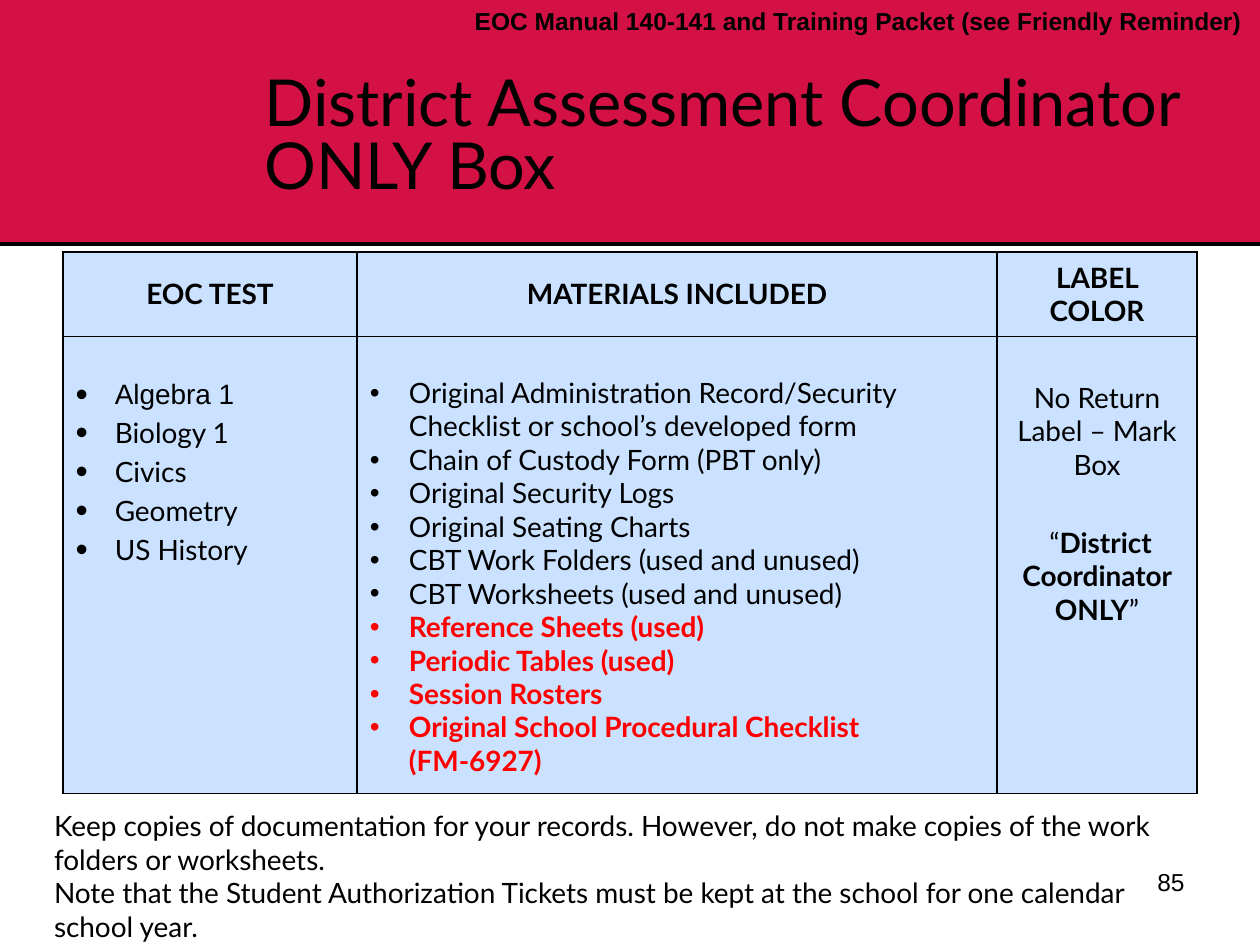
from dataclasses import dataclass
from itertools import product
from typing import Optional

from lxml.etree import SubElement
from pptx import Presentation
from pptx.dml.color import RGBColor
from pptx.enum.shapes import MSO_CONNECTOR as Connector, MSO_SHAPE as Shape
from pptx.enum.text import MSO_ANCHOR as Anchor, MSO_AUTO_SIZE as AutoSize, PP_ALIGN as Align
from pptx.oxml import parse_xml
from pptx.oxml.ns import nsdecls, qn
from pptx.util import Cm, Pt

COLORS = {"band": "D31145", "cell": "CAE2FF", "text": "000000", "accent": "FF0000"}


@dataclass
class Note:
    left: float
    top: float
    width: float
    height: float
    lines: list[str]
    size: int = 16
    font: str = "Lato"
    bold: bool = False
    align: Align = Align.LEFT


@dataclass
class Item:
    text: str
    font: str = "Lato"
    color: str = "text"
    bold: bool = False


NOTES = [
    Note(18.21, 17.35, 5.92, 1.32, ["85"], size=14, font="Arial", align=Align.RIGHT),
    Note(0.84, 16.18, 22.86, 3.68, [
        "Keep copies of documentation for your records. However, do not make copies "
        "of the work folders or worksheets.",
        "Note that the Student Authorization Tickets must be kept at the school for "
        "one calendar school year.",
    ]),
    Note(9.32, 0, 16.08, 0.86,
         ["EOC Manual 140-141 and Training Packet (see Friendly Reminder)"],
         size=14, font="Arial", bold=True),
]

HEADINGS = ["EOC TEST", "MATERIALS INCLUDED", "LABEL COLOR"]
COLUMN_WIDTHS = [5.93, 12.9, 4.03]
ROW_HEIGHTS = [1.7, 9.22]
TESTS = [Item("Algebra 1", font="Arial")] + [
    Item(name) for name in ("Biology 1", "Civics", "Geometry", "US History")]
MATERIALS = [Item(name) for name in (
    "Original Administration Record/Security Checklist or school’s developed form",
    "Chain of Custody Form (PBT only)",
    "Original Security Logs",
    "Original Seating Charts",
    "CBT Work Folders (used and unused)",
    "CBT Worksheets (used and unused)",
)] + [Item(name, color="accent", bold=True) for name in (
    "Reference Sheets (used)",
    "Periodic Tables (used)",
    "Session Rosters",
    "Original School Procedural Checklist (FM-6927)",
)]


def rgb(name: str) -> RGBColor:
    return RGBColor.from_string(COLORS[name])


def write(para, text: str, *, size: int = 16, font: str = "Lato", color: str = "text",
          bold: bool = False, align: Optional[Align] = None) -> None:
    """Add a formatted run to a paragraph."""
    span = para.add_run()
    span.text = text
    span.font.size = Pt(size)
    span.font.name = font
    span.font.bold = bold
    span.font.color.rgb = rgb(color)
    if align is not None:
        para.alignment = align


def next_para(frame, index: int):
    return frame.add_paragraph() if index else frame.paragraphs[0]


def add_note(page, note: Note) -> None:
    box = page.shapes.add_textbox(*map(Cm, (note.left, note.top, note.width, note.height)))
    box.text_frame.word_wrap = True
    for index, line in enumerate(note.lines):
        write(next_para(box.text_frame, index), line, size=note.size, font=note.font,
              bold=note.bold, align=note.align)


def style_cell(cell) -> None:
    """Give a cell thin black borders and the pale fill."""
    props = cell._tc.get_or_add_tcPr()
    for side in ("lnL", "lnR", "lnT", "lnB"):
        props.append(parse_xml(
            f'<a:{side} {nsdecls("a")} w="12700"><a:solidFill>'
            f'<a:srgbClr val="{COLORS["text"]}"/></a:solidFill></a:{side}>'))
    cell.fill.solid()
    cell.fill.fore_color.rgb = rgb("cell")


def fill_list(cell, items: list[Item], *, top: float, gap: float = 0,
              bullet_size: int = 100) -> None:
    """Write a bulleted list that starts at the given inset."""
    cell.margin_top = Cm(top)
    for index, item in enumerate(items):
        para = next_para(cell.text_frame, index)
        props = para._p.get_or_add_pPr()
        props.set("marL", str(Cm(0.79)))
        props.set("indent", str(-Cm(0.79)))
        SubElement(props, qn("a:buSzPct")).set("val", str(bullet_size * 1000))
        SubElement(props, qn("a:buFont")).set("typeface", "Arial")
        SubElement(props, qn("a:buChar")).set("char", "•")
        if index:
            para.space_before = Pt(gap)
        write(para, item.text, font=item.font, color=item.color, bold=item.bold)


def add_band(page) -> None:
    """Draw the title band and its rule behind the title."""
    rule = page.shapes.add_connector(Connector.STRAIGHT, 0, Cm(4.88), Cm(25.4), Cm(4.88))
    rule.line.color.rgb = rgb("text")
    rule.line.width = Pt(4)
    SubElement(rule.element.spPr, qn("a:effectLst"))
    band = page.shapes.add_shape(Shape.RECTANGLE, 0, 0, Cm(25.4), Cm(4.88))
    band.shadow.inherit = False
    band.fill.solid()
    band.fill.fore_color.rgb = rgb("band")
    band.line.fill.background()
    for part in (rule, band):
        page.shapes.title.element.addprevious(part.element)


def set_title(title) -> None:
    title.left, title.top, title.width, title.height = map(Cm, (5.08, 0.84, 20.32, 3.94))
    frame = title.text_frame
    frame.word_wrap = True
    frame.auto_size = AutoSize.NONE
    frame.vertical_anchor = Anchor.MIDDLE
    para = frame.paragraphs[0]
    para.line_spacing = 0.8
    write(para, "District Assessment Coordinator ", size=37, align=Align.LEFT)
    para.add_line_break()
    write(para, "ONLY Box", size=37)


def add_materials_table(page) -> None:
    frame = page.shapes.add_table(2, 3, Cm(1.27), Cm(5.08),
                                  Cm(sum(COLUMN_WIDTHS)), Cm(sum(ROW_HEIGHTS)))
    table = frame.table
    table.first_row = table.horz_banding = False
    for column, width in zip(table.columns, COLUMN_WIDTHS):
        column.width = Cm(width)
    for row, height in zip(table.rows, ROW_HEIGHTS):
        row.height = Cm(height)
    for row, column in product(range(2), range(3)):
        style_cell(table.cell(row, column))

    # Headings
    for column, heading in enumerate(HEADINGS):
        cell = table.cell(0, column)
        cell.vertical_anchor = Anchor.MIDDLE
        write(cell.text_frame.paragraphs[0], heading, bold=True, align=Align.CENTER)

    # Lists of tests and materials
    fill_list(table.cell(1, 0), TESTS, top=0.86, gap=3.2, bullet_size=125)
    fill_list(table.cell(1, 1), MATERIALS, top=0.8)

    # Label colour
    label = table.cell(1, 2)
    label.margin_top = Cm(0.9)
    write(label.text_frame.paragraphs[0], "No Return Label – Mark Box", align=Align.CENTER)
    para = label.text_frame.add_paragraph()
    para.space_before = Pt(25.4)
    write(para, " “", align=Align.CENTER)
    write(para, "District Coordinator ONLY", bold=True)
    write(para, "”")


def main() -> None:
    deck = Presentation()
    deck.slide_width, deck.slide_height = Cm(25.4), Cm(19.05)
    page = deck.slides.add_slide(deck.slide_layouts[5])
    add_band(page)
    set_title(page.shapes.title)
    add_materials_table(page)
    for note in NOTES:
        add_note(page, note)
    deck.save("out.pptx")


if __name__ == "__main__":
    main()
